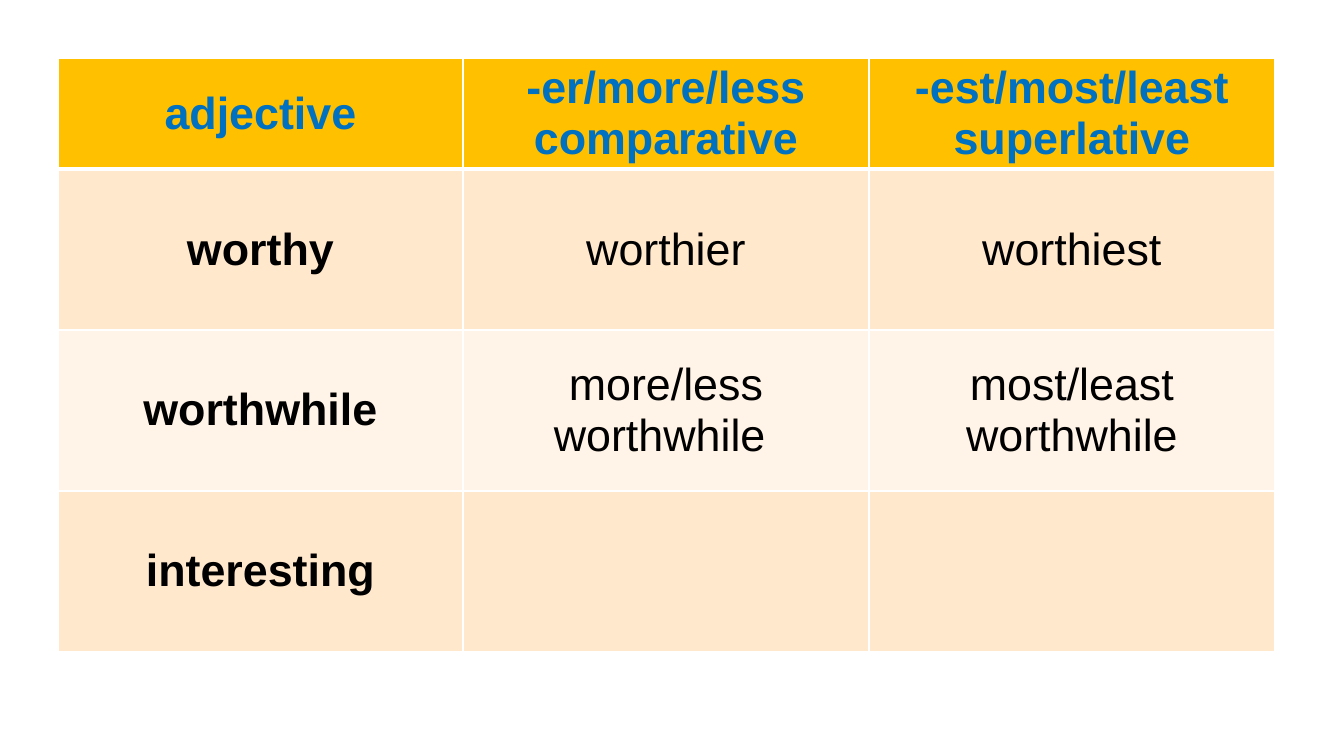
from lxml import etree
from pptx import Presentation
from pptx import util as u
from pptx.dml.color import RGBColor
from pptx.enum import text
from pptx.oxml import ns

EMU_PER_PX = 914400 / 100.8
COLORS = {
    "header": "FFC000",
    "heading": "0070C0",
    "dark_band": "FFE8CC",
    "light_band": "FFF4E7",
    "word": "000000",
    "border": "FFFFFF",
}
COLUMN_WIDTHS = [405, 406, 406]
ROW_HEIGHTS = [111, 161, 161, 161]
ROW_FILLS = ["header", "dark_band", "light_band", "dark_band"]
WORDS = [
    [["adjective"], ["-er/more/less", "comparative"], ["-est/most/least", "superlative"]],
    [["worthy"], ["worthier"], ["worthiest"]],
    [["worthwhile"], ["more/less", "worthwhile "], ["most/least", "worthwhile"]],
    [["interesting"], [], []],
]


def px(length):
    return u.Emu(round(length * EMU_PER_PX))


def add_border(cell, side, points):
    properties = cell._tc.get_or_add_tcPr()
    line = etree.SubElement(properties, ns.qn(f"a:ln{side}"), w=str(u.Pt(points)))
    fill = etree.SubElement(line, ns.qn("a:solidFill"))
    etree.SubElement(fill, ns.qn("a:srgbClr"), val=COLORS["border"])


deck = Presentation()
deck.slide_width, deck.slide_height = px(1344), px(756)
page = deck.slides.add_slide(deck.slide_layouts[6])
frame = page.shapes.add_table(
    len(ROW_HEIGHTS), len(COLUMN_WIDTHS),
    px(58), px(58), px(sum(COLUMN_WIDTHS)), px(sum(ROW_HEIGHTS)),
)
table = frame.table
for column, width in zip(table.columns, COLUMN_WIDTHS):
    column.width = px(width)
for row, height in zip(table.rows, ROW_HEIGHTS):
    row.height = px(height)

for row_index, row_words in enumerate(WORDS):
    for column_index, lines in enumerate(row_words):
        cell = table.cell(row_index, column_index)
        is_header = row_index == 0
        for side in "LRTB":
            at_header_edge = (row_index, side) in [(0, "B"), (1, "T")]
            add_border(cell, side, 3 if at_header_edge else 1)
        cell.fill.solid()
        cell.fill.fore_color.rgb = RGBColor.from_string(COLORS[ROW_FILLS[row_index]])
        cell.vertical_anchor = text.MSO_ANCHOR.MIDDLE
        for line_index, line in enumerate(lines):
            box = cell.text_frame
            para = box.add_paragraph() if line_index else box.paragraphs[0]
            para.alignment = text.PP_ALIGN.CENTER
            span = para.add_run()
            span.text = line
            span.font.name = "Arial"
            span.font.size = u.Pt(32)
            span.font.bold = is_header or column_index == 0
            color = COLORS["heading" if is_header else "word"]
            span.font.color.rgb = RGBColor.from_string(color)

deck.save("out.pptx")
